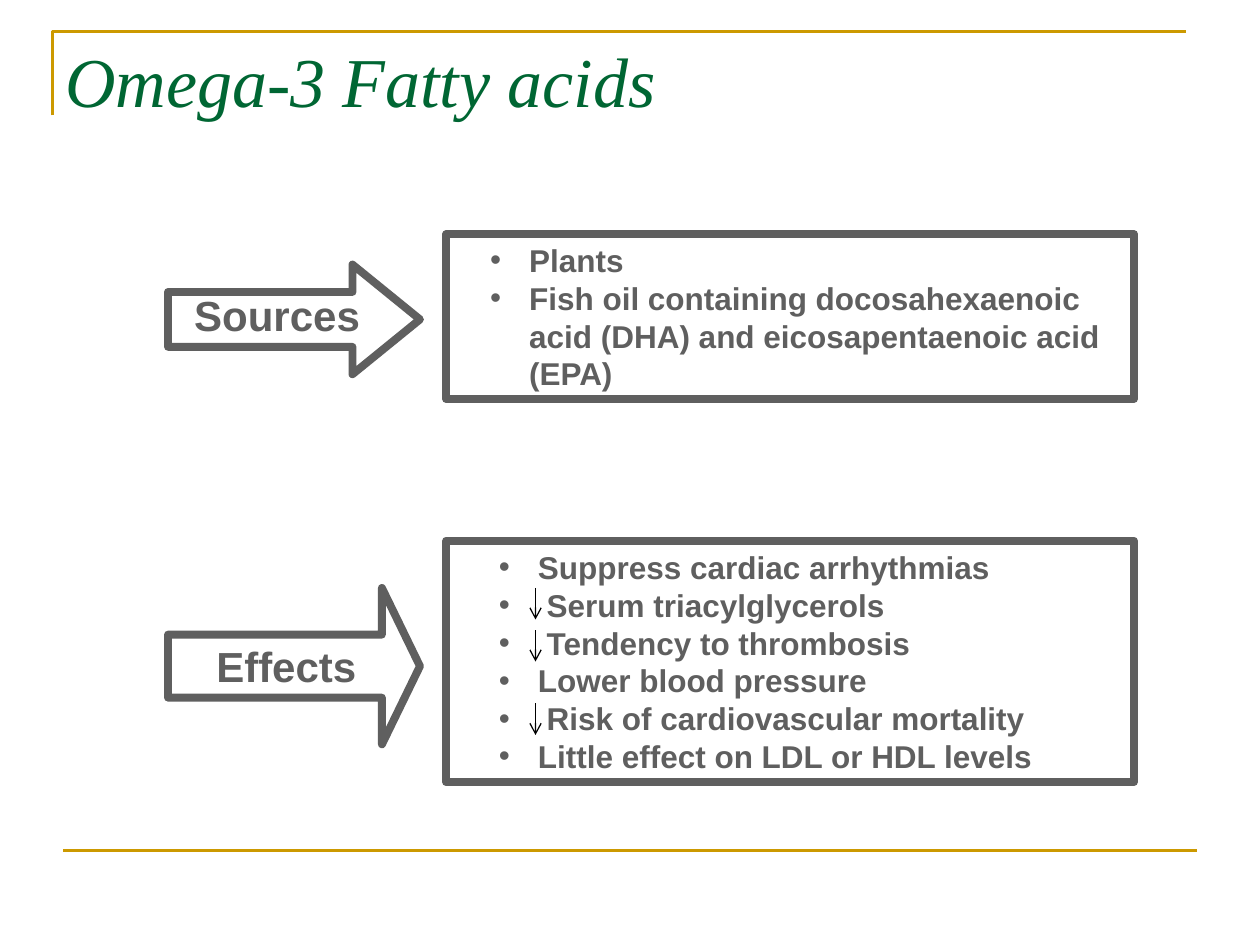
from lxml.etree import SubElement
from pptx import Presentation
from pptx.dml.color import RGBColor as RGB
from pptx.enum.shapes import MSO_CONNECTOR as Connector, MSO_SHAPE as Preset
from pptx.enum.text import MSO_ANCHOR as Anchor, PP_ALIGN as Align
from pptx.oxml.ns import qn
from pptx.util import Inches, Pt

THEME = {
    "gold": RGB(0xCC, 0x99, 0x00), "green": RGB(0x00, 0x66, 0x33),
    "gray": RGB(0x5F, 0x5F, 0x5F), "black": RGB(0, 0, 0),
    "title_font": "Times New Roman", "body_font": "Arial",
    "title_size": Pt(40), "label_size": Pt(24), "body_size": Pt(18),
    "rule": Pt(1.5), "outline": Pt(4.5), "thin": Pt(0.75),
}

presentation = Presentation()
presentation.slide_width, presentation.slide_height = Inches(10), Inches(7.5)
slide = presentation.slides.add_slide(presentation.slide_layouts[5])
shapes = slide.shapes
COLUMN = presentation.slide_width // 240
ROW = presentation.slide_height // 180


def add_outlined(preset, left, top, width, height):
    shape = shapes.add_shape(preset, int(left * COLUMN), int(top * ROW),
                             int(width * COLUMN), int(height * ROW))
    shape.shadow.inherit = False
    shape.fill.background()
    shape.line.color.rgb = THEME["gray"]
    shape.line.width = THEME["outline"]
    shape.text_frame.word_wrap = True
    shape.text_frame.vertical_anchor = Anchor.MIDDLE
    return shape


def add_line(start, end, color, width):
    line = shapes.add_connector(Connector.STRAIGHT, start[0] * COLUMN, start[1] * ROW,
                                end[0] * COLUMN, end[1] * ROW)
    line.line.color.rgb = color
    line.line.width = width
    SubElement(line._element.spPr, qn("a:effectLst"))
    return line


builder = shapes.build_freeform(10 * COLUMN, 22 * ROW)
builder.add_line_segments([(10 * COLUMN, 6 * ROW), (226 * COLUMN, 6 * ROW)], close=False)
corner = builder.convert_to_shape()
corner.shadow.inherit = False
corner.fill.background()
corner.line.color.rgb = THEME["gold"]
corner.line.width = THEME["rule"]
add_line((12, 162), (228, 162), THEME["gold"], THEME["rule"])

title = shapes.title
title.left, title.top = 10 * COLUMN, 6 * ROW
title.width, title.height = 134 * COLUMN, int(18.5 * ROW)
title.text_frame.text = "Omega-3 Fatty acids"
title.text_frame.vertical_anchor = Anchor.TOP
title_paragraph = title.text_frame.paragraphs[0]
title_paragraph.alignment = Align.LEFT
title_font = title_paragraph.runs[0].font
title_font.name, title_font.size = THEME["title_font"], THEME["title_size"]
title_font.italic = True
title_font.color.rgb = THEME["green"]

sections = [
    ("Sources", 50.4, 20.9, (0.5, 0.615), 0.8, 44.6, 31.4, 0.56,
     ["Plants",
      "Fish oil containing docosahexaenoic acid (DHA) and eicosapentaenoic acid (EPA)"]),
    ("Effects", 112, 29.8, (0.403, 0.243), 1.0, 103, 46, 0.63,
     ["Suppress cardiac arrhythmias", " Serum triacylglycerols",
      " Tendency to thrombosis", "Lower blood pressure",
      " Risk of cardiovascular mortality", "Little effect on LDL or HDL levels"]),
]
for (label, arrow_top, arrow_height, adjustments, spacing,
     box_top, box_height, indent, items) in sections:
    arrow = add_outlined(Preset.RIGHT_ARROW, 32, arrow_top, 48, arrow_height)
    arrow.adjustments[0], arrow.adjustments[1] = adjustments
    arrow.text_frame.text = label
    arrow.text_frame.paragraphs[0].alignment = Align.CENTER
    arrow.text_frame.paragraphs[0].line_spacing = spacing

    box = add_outlined(Preset.RECTANGLE, 85, box_top, 131, box_height)
    box.text_frame.text = "\n".join(items)
    for paragraph in box.text_frame.paragraphs:
        paragraph.alignment = Align.LEFT
        properties = paragraph._p.get_or_add_pPr()
        properties.set("marL", str(Inches(indent)))
        properties.set("indent", str(Inches(-0.31)))
        SubElement(properties, qn("a:buFont"), typeface=THEME["body_font"])
        SubElement(properties, qn("a:buChar"), char="•")

    for shape, size in ((arrow, THEME["label_size"]), (box, THEME["body_size"])):
        for paragraph in shape.text_frame.paragraphs:
            font = paragraph.runs[0].font
            font.name, font.size, font.bold = THEME["body_font"], size, True
            font.color.rgb = THEME["gray"]

for top in (112, 120, 134):
    decrease = add_line((102, top), (102, top + 6), THEME["black"], THEME["thin"])
    SubElement(decrease.line._get_or_add_ln(), qn("a:tailEnd"), type="arrow")

presentation.save("out.pptx")
